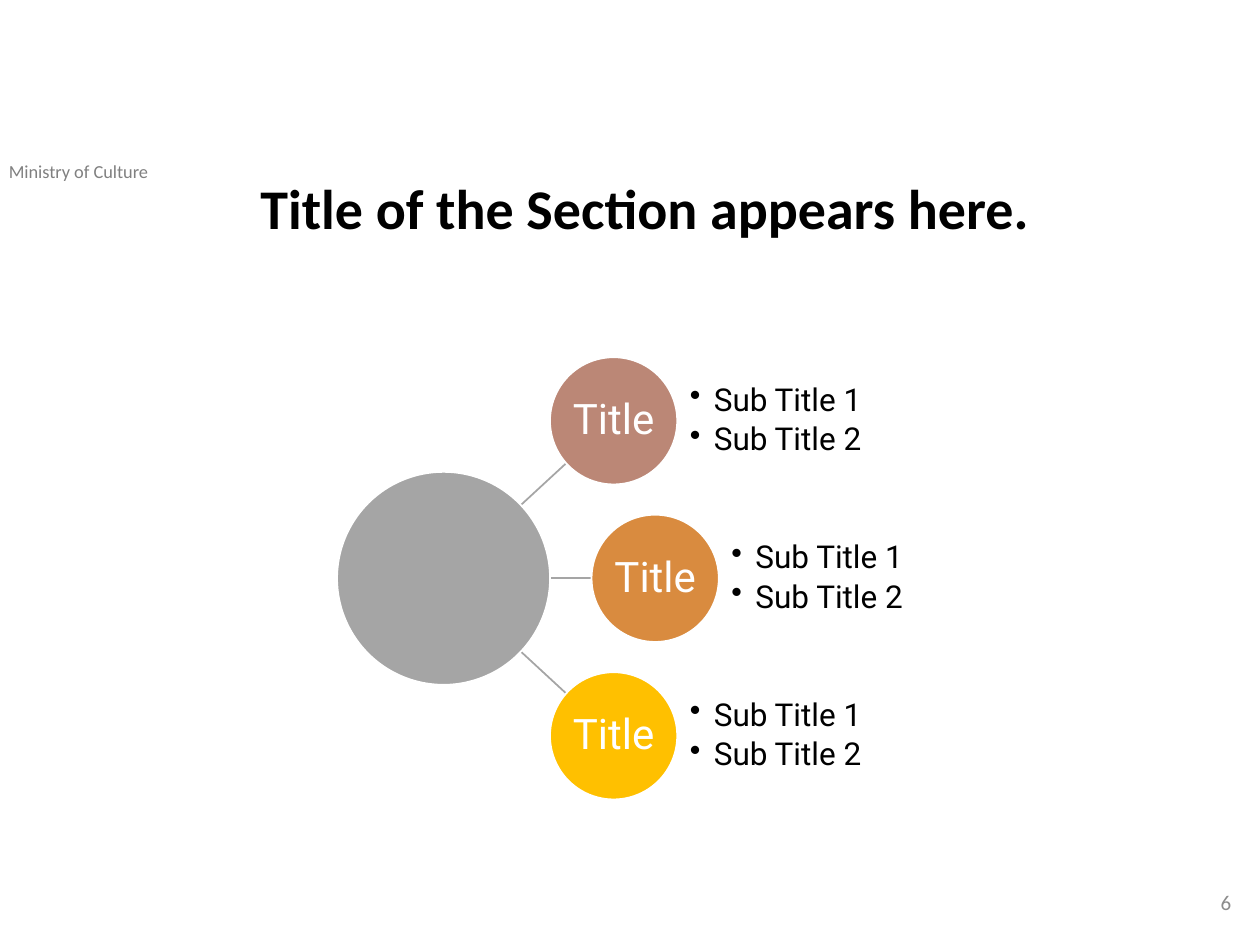
from dataclasses import dataclass

from lxml import etree
from pptx import Presentation
from pptx.dml.color import RGBColor
from pptx.enum import shapes, text
from pptx.oxml.ns import qn
from pptx.util import Inches, Pt

COLORS = {
    "hub": "A5A5A5", "rose": "BB8776", "orange": "D98B3F", "gold": "FFC000",
    "white": "FFFFFF", "black": "000000", "header": "808080", "number": "8C8C8C",
}
HUB_X, HUB_Y, HUB_SIZE = 3.52, 4.59, 1.69
NODE_SIZE, NODE_STEP = 1.01, 1.25
LABEL_SIZE, LIST_GAP, LIST_WIDTH, INDENT = 0.72, 0.1, 1.52, 0.19
SUBTITLES = ["Sub Title 1", "Sub Title 2"]


@dataclass
class Branch:
    """A satellite circle with its title, colour and spoke."""
    title: str
    color: str
    center_x: float
    row: int
    spoke: tuple[float, float, float, float]

    @property
    def center_y(self) -> float:
        return HUB_Y + self.row * NODE_STEP


BRANCHES = [
    Branch("Title", "rose", 4.87, -1, (4.1, 4.04, 4.49, 3.68)),
    Branch("Title", "orange", 5.2, 0, (4.1, HUB_Y, 4.7, HUB_Y)),
    Branch("Title", "gold", 4.87, 1, (4.1, 5.14, 4.49, 5.5)),
]


def rgb(name: str) -> RGBColor:
    return RGBColor.from_string(COLORS[name])


def add_bullet(paragraph) -> None:
    props = paragraph._p.get_or_add_pPr()
    props.set("marL", str(Inches(INDENT)))
    props.set("indent", str(-Inches(INDENT)))
    etree.SubElement(props, qn("a:buChar")).set("char", "•")


def add_text(slide, lines: list[str], left: float, top: float, width: float, height: float,
             *, size: float, color: str, font: str = "Calibri", bold: bool = False,
             align=text.PP_ALIGN.LEFT, anchor=text.MSO_ANCHOR.MIDDLE,
             inset: tuple[float, float] = (0.1, 0.05), leading: float = 1.0,
             gap: float = 0, bullets: bool = False) -> None:
    box = slide.shapes.add_textbox(Inches(left), Inches(top), Inches(width), Inches(height))
    frame = box.text_frame
    frame.word_wrap = True
    frame.vertical_anchor = anchor
    frame.margin_left = frame.margin_right = Inches(inset[0])
    frame.margin_top = frame.margin_bottom = Inches(inset[1])
    for index, line in enumerate(lines):
        paragraph = frame.add_paragraph() if index else frame.paragraphs[0]
        if bullets:
            add_bullet(paragraph)
        paragraph.alignment = align
        paragraph.line_spacing = leading
        if index:
            paragraph.space_before = Pt(gap)
        run = paragraph.add_run()
        run.text = line
        run.font.name = font
        run.font.size = Pt(size)
        run.font.bold = bold
        run.font.color.rgb = rgb(color)


def add_circle(slide, center_x: float, center_y: float, size: float, color: str) -> None:
    circle = slide.shapes.add_shape(
        shapes.MSO_SHAPE.OVAL, Inches(center_x - size / 2), Inches(center_y - size / 2),
        Inches(size), Inches(size))
    circle.shadow.inherit = False
    circle.fill.solid()
    circle.fill.fore_color.rgb = rgb(color)
    circle.line.color.rgb = rgb("white")
    circle.line.width = Pt(1)


def add_spoke(slide, ends: tuple[float, float, float, float]) -> None:
    spoke = slide.shapes.add_connector(
        shapes.MSO_CONNECTOR.STRAIGHT, *(Inches(value) for value in ends))
    spoke.line.color.rgb = rgb("hub")
    spoke.line.width = Pt(1)
    etree.SubElement(spoke._element.spPr, qn("a:effectLst"))


def add_branch(slide, branch: Branch) -> None:
    add_circle(slide, branch.center_x, branch.center_y, NODE_SIZE, branch.color)
    add_text(slide, [branch.title], branch.center_x - LABEL_SIZE / 2,
             branch.center_y - LABEL_SIZE / 2, LABEL_SIZE, LABEL_SIZE, size=24,
             color="white", font="Roboto", align=text.PP_ALIGN.CENTER,
             inset=(0.02, 0.02), leading=0.9)
    add_text(slide, SUBTITLES, branch.center_x + NODE_SIZE / 2 + LIST_GAP,
             branch.center_y - NODE_SIZE / 2, LIST_WIDTH, NODE_SIZE, size=18,
             color="black", font="Roboto", inset=(0, 0), leading=0.9, gap=3, bullets=True)


def main() -> None:
    """Build the section slide with a hub and three branches."""
    deck = Presentation()
    deck.slide_width, deck.slide_height = Inches(10), Inches(7.5)
    slide = deck.slides.add_slide(deck.slide_layouts[6])
    add_text(slide, ["Ministry of Culture"], 0, 1.22, 2.15, 0.28, size=10.5,
             color="header", anchor=text.MSO_ANCHOR.TOP, inset=(0.07, 0.05))
    for branch in BRANCHES:
        add_spoke(slide, branch.spoke)
    add_circle(slide, HUB_X, HUB_Y, HUB_SIZE, "hub")
    for branch in BRANCHES:
        add_branch(slide, branch)
    add_text(slide, ["6"], 7.62, 6.96, 2.25, 0.4, size=12, color="number",
             align=text.PP_ALIGN.RIGHT)
    add_text(slide, ["Title of the Section appears here."], 1.93, 1.39, 6.38, 0.79,
             size=32, color="black", bold=True, align=text.PP_ALIGN.CENTER,
             anchor=text.MSO_ANCHOR.TOP, leading=0.9)
    deck.save("out.pptx")


if __name__ == "__main__":
    main()
